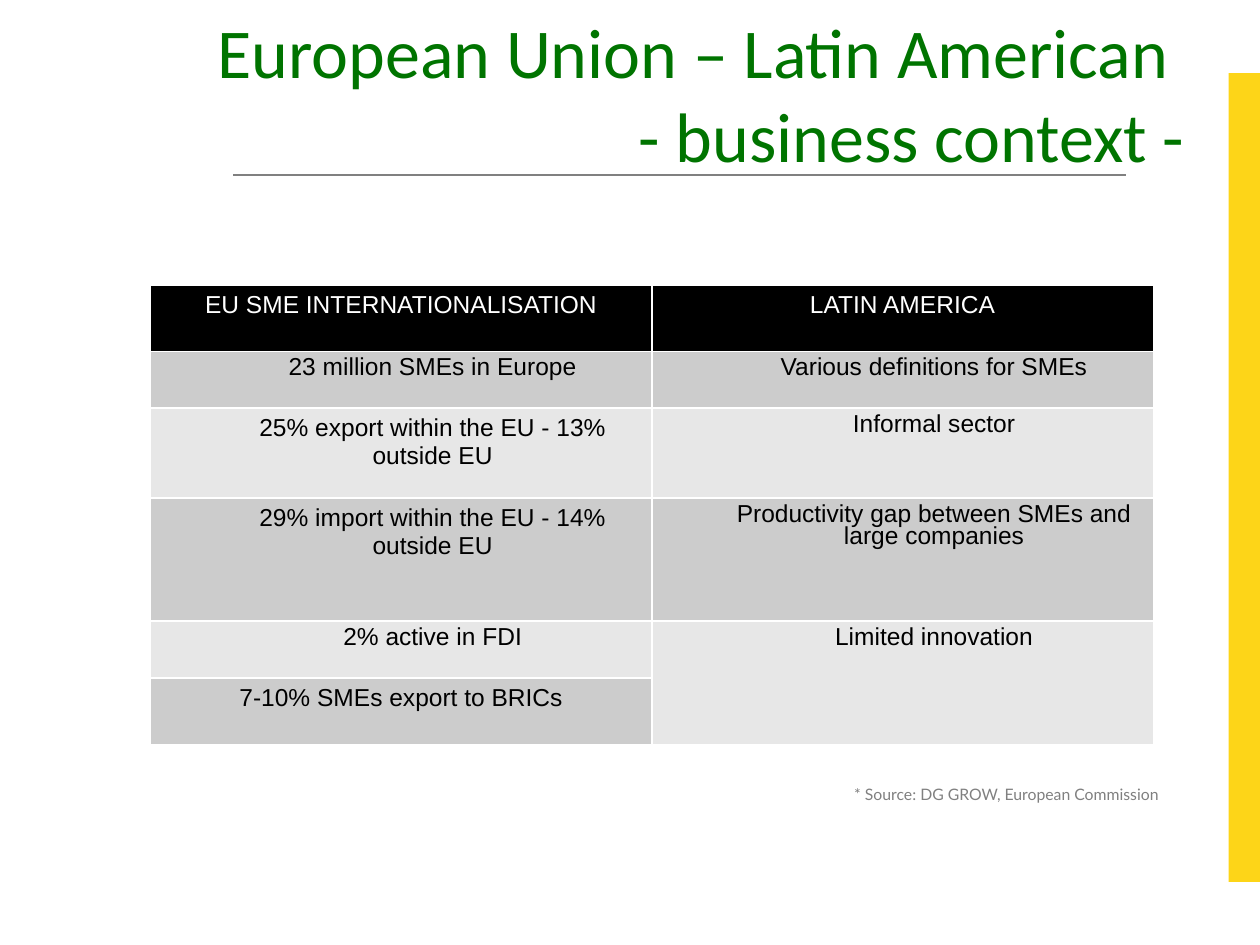
"""Build the slide comparing EU and Latin American business contexts."""
from dataclasses import dataclass
from typing import Optional

from lxml.etree import SubElement
from pptx import Presentation
from pptx.dml.color import RGBColor
from pptx.enum.shapes import MSO_CONNECTOR, MSO_SHAPE
from pptx.enum.text import MSO_ANCHOR, MSO_AUTO_SIZE, PP_ALIGN
from pptx.oxml.ns import qn
from pptx.util import Pt

COLORS = {
    "yellow": "FDD518",
    "green": "007400",
    "grey": "808080",
    "black": "000000",
    "white": "FFFFFF",
    "dark_band": "CCCCCC",
    "light_band": "E7E7E7",
}
COLUMN_WIDTH = 286.5
TITLE = "European Union – Latin American \v- business context -"
SOURCE = "* Source: DG GROW, European Commission"


@dataclass
class Entry:
    text: str
    indent: float = 36
    spacing: float = 0.8


@dataclass
class Row:
    height: float
    left: Entry
    right: Optional[Entry]


ROWS = [
    Row(37.75, Entry("EU SME INTERNATIONALISATION", 0, 1), Entry("LATIN AMERICA", 0, 1)),
    Row(32.5, Entry("23 million SMEs in Europe"), Entry("Various definitions for SMEs")),
    Row(51.5, Entry("25% export within the EU - 13% outside EU", spacing=1), Entry("Informal sector")),
    Row(70.25, Entry("29% import within the EU - 14% outside EU", spacing=1),
        Entry("Productivity gap between SMEs and large companies")),
    Row(32.5, Entry("2% active in FDI"), Entry("Limited innovation")),
    Row(38.25, Entry("7-10% SMEs export to BRICs", 0, 1), None),
]


def color(name: str) -> RGBColor:
    return RGBColor.from_string(COLORS[name])


def style_paragraph(paragraph, font: str, size: float, ink: str, alignment, spacing: float = 1) -> None:
    paragraph.alignment = alignment
    paragraph.line_spacing = spacing
    for span in paragraph.runs:
        span.font.name = font
        span.font.size = Pt(size)
        span.font.color.rgb = color(ink)


def place(shape, left: float, top: float, width: float, height: float) -> None:
    shape.left, shape.top, shape.width, shape.height = map(Pt, (left, top, width, height))


def draw_title(page) -> None:
    title = page.shapes.title
    place(title, 36, 1, 648, 109)
    frame = title.text_frame
    frame.text = TITLE
    frame.word_wrap = True
    frame.auto_size = MSO_AUTO_SIZE.NONE
    frame.vertical_anchor = MSO_ANCHOR.TOP
    style_paragraph(frame.paragraphs[0], "Calibri", 40, "green", PP_ALIGN.RIGHT)


def draw_decoration(page) -> None:
    bar = page.shapes.add_shape(MSO_SHAPE.RECTANGLE, Pt(702), Pt(41.75), Pt(18), Pt(462.25))
    bar.shadow.inherit = False
    bar.fill.solid()
    bar.fill.fore_color.rgb = color("yellow")
    bar.line.fill.background()
    rule = page.shapes.add_connector(MSO_CONNECTOR.STRAIGHT, Pt(133.25), Pt(100), Pt(643.5), Pt(100))
    rule.line.color.rgb = color("grey")
    rule.line.width = Pt(1.25)
    SubElement(rule._element.spPr, qn("a:effectLst"))


def draw_source(page) -> None:
    box = page.shapes.add_textbox(Pt(56.25), Pt(447), Pt(612.75), Pt(18))
    frame = box.text_frame
    frame.word_wrap = True
    frame.text = SOURCE
    style_paragraph(frame.paragraphs[0], "Lato", 9, "grey", PP_ALIGN.RIGHT, 0.8)


def format_cell(cell, band: str) -> None:
    properties = cell._tc.get_or_add_tcPr()
    for side in "LRTB":
        edge = SubElement(properties, qn(f"a:ln{side}"), w=str(Pt(1)))
        fill = SubElement(edge, qn("a:solidFill"))
        SubElement(fill, qn("a:srgbClr"), val=COLORS["white"])
    cell.fill.solid()
    cell.fill.fore_color.rgb = color(band)


def write_entry(cell, entry: Entry, ink: str) -> None:
    cell.text_frame.text = entry.text
    paragraph = cell.text_frame.paragraphs[0]
    paragraph._p.get_or_add_pPr().set("marL", str(Pt(entry.indent)))
    style_paragraph(paragraph, "Arial", 14, ink, PP_ALIGN.CENTER, entry.spacing)
    for span in paragraph.runs:
        span.font.bold = False


def draw_table(page) -> None:
    height = sum(row.height for row in ROWS)
    table = page.shapes.add_table(len(ROWS), 2, Pt(86), Pt(163), Pt(2 * COLUMN_WIDTH), Pt(height)).table
    for index, row in enumerate(ROWS):
        table.rows[index].height = Pt(row.height)
        band = "black" if index == 0 else "dark_band" if index % 2 else "light_band"
        for column, entry in enumerate((row.left, row.right)):
            cell = table.cell(index, column)
            format_cell(cell, band if entry else "light_band")
            if entry:
                write_entry(cell, entry, "black" if index else "white")
    table.cell(4, 1).merge(table.cell(5, 1))


def main() -> None:
    deck = Presentation()
    deck.slide_width, deck.slide_height = Pt(720), Pt(540)
    page = deck.slides.add_slide(deck.slide_layouts[5])
    draw_decoration(page)
    draw_source(page)
    draw_table(page)
    draw_title(page)
    deck.save("out.pptx")


if __name__ == "__main__":
    main()
